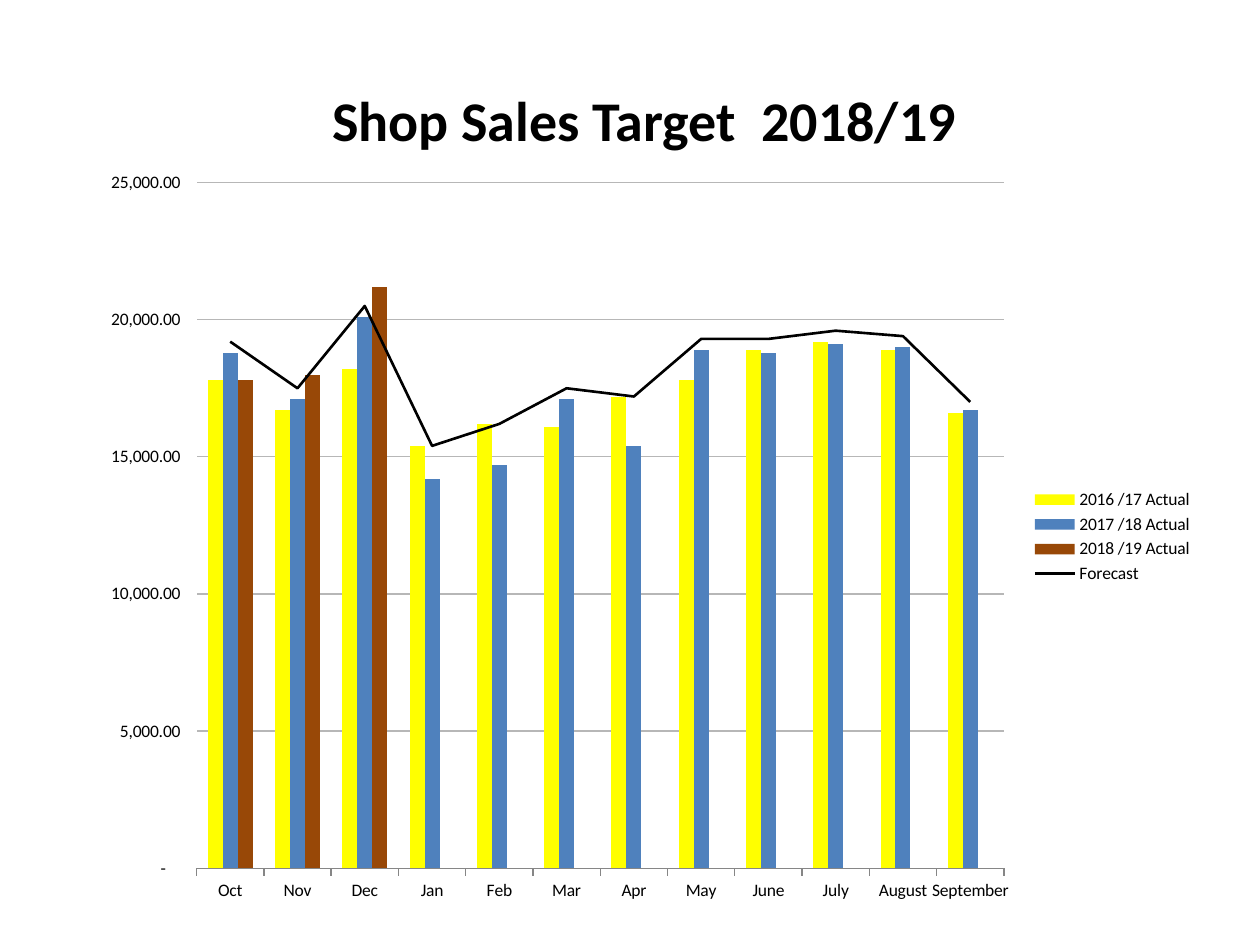
from dataclasses import dataclass
from typing import Optional

import pptx
import pptx.chart.data
import pptx.dml.color
import pptx.enum.chart
import pptx.enum.text
import pptx.oxml
import pptx.oxml.ns
import pptx.util

Inches = pptx.util.Inches
Pt = pptx.util.Pt
qn = pptx.oxml.ns.qn

FONT = "Calibri"
COLORS = {
    "text": "000000",
    "plot": "FFFFFF",
    "grid": "B7B7B7",
    "axis": "868686",
    "2016/17": "FFFF00",
    "2017/18": "4F81BD",
    "2018/19": "984807",
    "forecast": "000000",
}
NUMBER_FORMAT = '_-* #,##0.00_-;\\-* #,##0.00_-;_-* "-"??_'
MONTHS = ["Oct", "Nov", "Dec", "Jan", "Feb", "Mar", "Apr", "May",
          "June", "July", "August", "September"]


@dataclass
class SalesSeries:
    name: str
    color: str
    values: list[Optional[int]]


ACTUALS = [
    SalesSeries("2016 /17 Actual", "2016/17",
                [17800, 16700, 18200, 15400, 16200, 16100,
                 17200, 17800, 18900, 19200, 18900, 16600]),
    SalesSeries("2017 /18 Actual", "2017/18",
                [18800, 17100, 20100, 14200, 14700, 17100,
                 15400, 18900, 18800, 19100, 19000, 16700]),
    SalesSeries("2018 /19 Actual", "2018/19",
                [17800, 18000, 21200] + [None] * 9),
]
FORECAST = SalesSeries("Forecast", "forecast",
                       [19200, 17500, 20500, 15400, 16200, 17500,
                        17200, 19300, 19300, 19600, 19400, 17000])


def color(name: str) -> pptx.dml.color.RGBColor:
    return pptx.dml.color.RGBColor.from_string(COLORS[name])


def chart_xml(tag: str, content: str = ""):
    """Parse one chart element with the needed namespaces."""
    namespaces = pptx.oxml.ns.nsdecls("c", "a")
    return pptx.oxml.parse_xml(f"<c:{tag} {namespaces}>{content}</c:{tag}>")


def add_title(slide, text: str) -> None:
    title = slide.shapes.title
    title.left, title.top = Inches(1.51), Inches(0.63)
    title.width, title.height = Inches(7.21), Inches(0.64)
    text_frame = title.text_frame
    text_frame.text = text
    text_frame.word_wrap = True
    text_frame.vertical_anchor = pptx.enum.text.MSO_ANCHOR.TOP
    paragraph = text_frame.paragraphs[0]
    paragraph.alignment = pptx.enum.text.PP_ALIGN.CENTER
    font = paragraph.runs[0].font
    font.name, font.size, font.bold = FONT, Pt(32), True
    font.color.rgb = color("text")


def move_last_series_to_line(chart) -> None:
    """Turn the last column series into a line on the same axes."""
    bar_chart = chart.plots[0]._element
    series = bar_chart.findall(qn("c:ser"))[-1]
    for invert in series.findall(qn("c:invertIfNegative")):
        series.remove(invert)
    line_chart = chart_xml("lineChart", '<c:grouping val="standard"/><c:varyColors val="0"/>')
    line_chart.append(series)
    line_chart.append(chart_xml("marker"))
    for axis in bar_chart.findall(qn("c:axId")):
        axis_id = chart_xml("axId")
        axis_id.set("val", axis.get("val"))
        line_chart.append(axis_id)
    bar_chart.addnext(line_chart)


def format_plot_area(chart) -> None:
    """Fix the inner plot position and give it a white fill."""
    plot_area = chart._chartSpace.find(".//" + qn("c:plotArea"))
    for layout in plot_area.findall(qn("c:layout")):
        plot_area.remove(layout)
    position = {"x": 0.1, "y": 0.03, "w": 0.72, "h": 0.91}
    content = '<c:layoutTarget val="inner"/><c:xMode val="edge"/><c:yMode val="edge"/>'
    content += "".join(f'<c:{key} val="{value}"/>' for key, value in position.items())
    plot_area.insert(0, chart_xml("layout", f"<c:manualLayout>{content}</c:manualLayout>"))
    plot_area.append(chart_xml(
        "spPr", f'<a:solidFill><a:srgbClr val="{COLORS["plot"]}"/></a:solidFill>'))


def format_axes(chart) -> None:
    outside = pptx.enum.chart.XL_TICK_MARK.OUTSIDE
    # Month labels take the chart font; without own text settings they stay on one line
    months = chart.category_axis
    months.major_tick_mark = outside
    months.format.line.color.rgb = color("axis")
    for text_settings in months._element.findall(qn("c:txPr")):
        months._element.remove(text_settings)

    sales = chart.value_axis
    sales.minimum_scale, sales.maximum_scale, sales.major_unit = 0, 25000, 5000
    sales.major_tick_mark = outside
    sales.format.line.fill.background()
    sales.tick_labels.number_format = NUMBER_FORMAT
    sales.tick_labels.number_format_is_linked = False
    gridline = sales.major_gridlines.format.line
    gridline.color.rgb, gridline.width = color("grid"), Pt(0.75)


def add_sales_chart(slide) -> None:
    chart_data = pptx.chart.data.CategoryChartData()
    chart_data.categories = MONTHS
    for series in [*ACTUALS, FORECAST]:
        chart_data.add_series(series.name, series.values)
    chart = slide.shapes.add_chart(
        pptx.enum.chart.XL_CHART_TYPE.COLUMN_CLUSTERED,
        Inches(0.67), Inches(1.27), Inches(8.9), Inches(5.98), chart_data).chart
    chart.has_title = False
    chart.font.name, chart.font.size = FONT, Pt(10)
    chart.font.color.rgb = color("text")
    chart.has_legend = True
    chart.legend.position = pptx.enum.chart.XL_LEGEND_POSITION.RIGHT
    chart.legend.include_in_layout = False

    move_last_series_to_line(chart)
    columns, line = chart.plots
    columns.vary_by_categories = False
    columns.gap_width = 150
    for column, actual in zip(columns.series, ACTUALS):
        column.format.fill.solid()
        column.format.fill.fore_color.rgb = color(actual.color)
    forecast = line.series[0]
    forecast.smooth = False
    forecast.marker.style = pptx.enum.chart.XL_MARKER_STYLE.NONE
    forecast.format.line.color.rgb = color(FORECAST.color)
    forecast.format.line.width = Pt(1.5)

    format_axes(chart)
    format_plot_area(chart)


def main() -> None:
    presentation = pptx.Presentation()
    presentation.slide_width = Inches(10)
    presentation.slide_height = Inches(7.5)
    slide = presentation.slides.add_slide(presentation.slide_layouts[5])
    add_sales_chart(slide)
    add_title(slide, "Shop Sales Target  2018/19")
    presentation.save("out.pptx")


if __name__ == "__main__":
    main()
